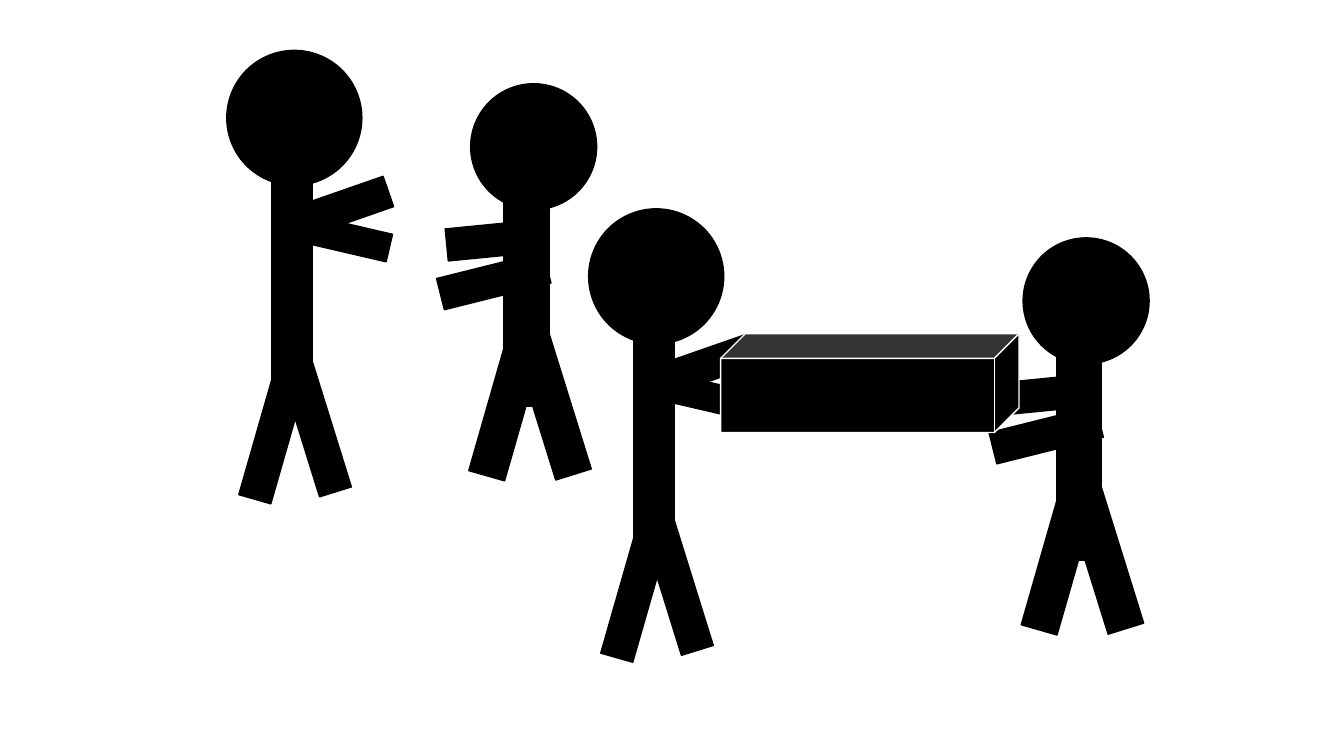
from pptx import Presentation
from pptx.dml.color import RGBColor
from pptx.enum.shapes import MSO_SHAPE
from pptx.util import Pt

BLACK = RGBColor(0x00, 0x00, 0x00)
WHITE = RGBColor(0xFF, 0xFF, 0xFF)

# Body parts: shape, left, top, width, height, rotation (points from the head's corner)
TALL_FIGURE = [
    (MSO_SHAPE.OVAL, 0, 0, 96.5, 96.5, 0),
    (MSO_SHAPE.RECTANGLE, 32.4, 85.9, 28.8, 174.2, 0),
    (MSO_SHAPE.RECTANGLE, 65.5, 73.4, 23, 81.4, 250.8),
    (MSO_SHAPE.RECTANGLE, 73.4, 100.1, 20.2, 67, 283.1),
    (MSO_SHAPE.RECTANGLE, 22.3, 219.6, 23.8, 103, 196),
    (MSO_SHAPE.RECTANGLE, 51.8, 223.9, 23.8, 93.6, 162.7),
]
SHORT_FIGURE = [
    (MSO_SHAPE.OVAL, 0, 0, 90, 90, 0),
    (MSO_SHAPE.RECTANGLE, 23.8, 36, 32.4, 194.4, 0),
    (MSO_SHAPE.RECTANGLE, 44.6, 177.1, 26.6, 104.4, 162.7),
    (MSO_SHAPE.RECTANGLE, 14, 167, 26.6, 115.2, 196),
    (MSO_SHAPE.RECTANGLE, 5, 101.5, 23, 78.5, 256),
    (MSO_SHAPE.RECTANGLE, 4, 79.2, 23, 65.5, 264.4),
]


def add_solid(group, kind, x, y, w, h, rotation=0, line=BLACK):
    sp = group.shapes.add_shape(kind, Pt(x), Pt(y), Pt(w), Pt(h))
    sp.fill.solid()
    sp.fill.fore_color.rgb = BLACK
    sp.line.color.rgb = line
    for name, value in {"rotation": rotation, "shadow.inherit": False,
                        "line.width": Pt(1)}.items():
        *owner, attr = name.split(".")
        setattr(getattr(sp, owner[0]) if owner else sp, attr, value)
    return sp


def add_figure(group, parts, x, y):
    for kind, dx, dy, w, h, rotation in parts:
        add_solid(group, kind, x + dx, y + dy, w, h, rotation)


def add_pair(slide, tall_at, short_at):
    group = slide.shapes.add_group_shape()
    add_figure(group, TALL_FIGURE, *tall_at)
    add_figure(group, SHORT_FIGURE, *short_at)
    return group


def main():
    prs = Presentation()
    prs.slide_width, prs.slide_height = Pt(960), Pt(540)
    slide = prs.slides.add_slide(prs.slide_layouts[6])

    # Two people with empty hands
    add_pair(slide, (162, 36), (336.2, 59.8))

    # Two people carrying a box
    carriers = add_pair(slide, (420.5, 149.2), (730.8, 169.9))
    add_solid(carriers, MSO_SHAPE.CUBE, 514.8, 238.3, 213.1, 70.6, line=WHITE)

    prs.save("out.pptx")


if __name__ == "__main__":
    main()
